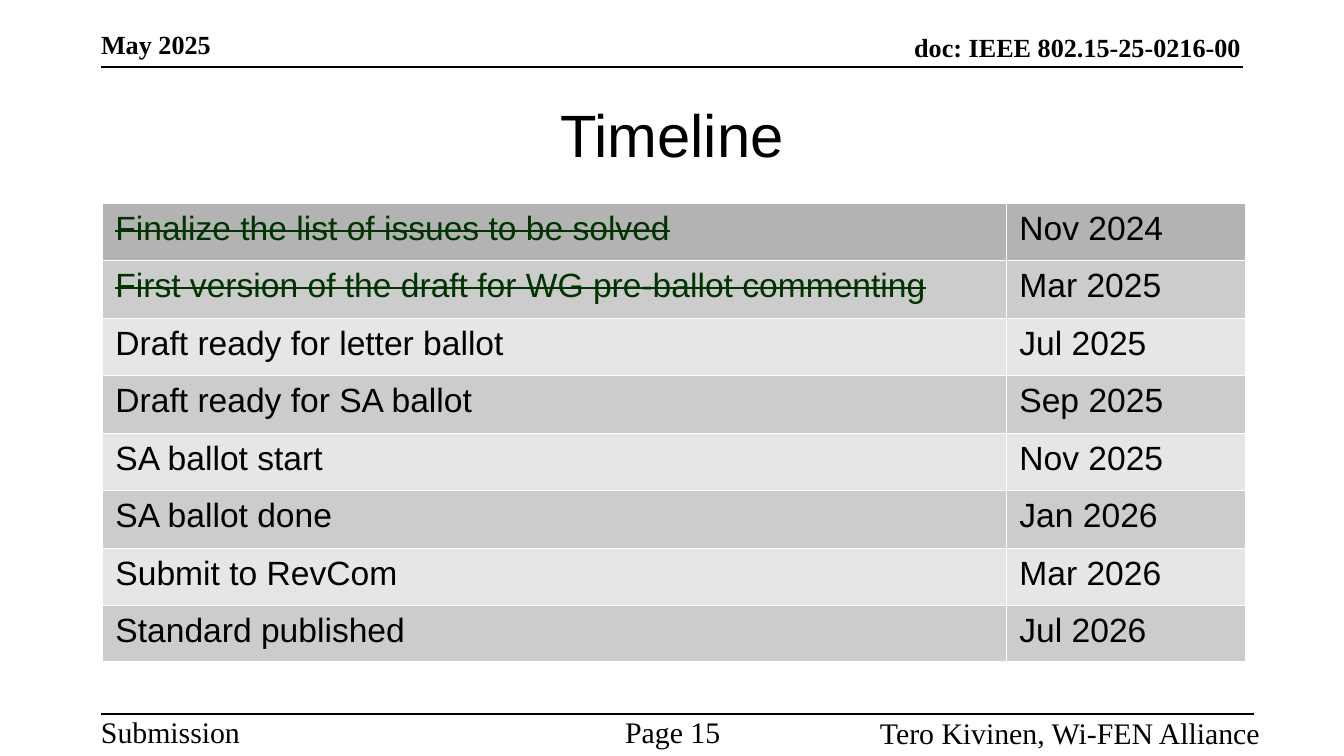
from lxml import etree
from pptx import Presentation
from pptx import util as u
from pptx.dml.color import RGBColor
from pptx.enum import shapes, text
from pptx.oxml import ns

PX = 914400 / 134.4  # EMU in one px
COLORS = {
    "black": "000000",
    "white": "FFFFFF",
    "done": "003300",
    "first_row": "B3B3B3",
    "dark_row": "CCCCCC",
    "light_row": "E6E6E6",
}


def px(length):
    return u.Emu(round(length * PX))


def add_run(paragraph, words, size, font, color="black", bold=False):
    run = paragraph.add_run()
    run.text = words
    run.font.size = u.Pt(size)
    run.font.name = font
    run.font.bold = bold
    run.font.color.rgb = RGBColor.from_string(COLORS[color])
    return run


presentation = Presentation()
presentation.slide_width, presentation.slide_height = px(1344), px(756)
slide = presentation.slides.add_slide(presentation.slide_layouts[6])

# Header and footer rules
for left, right, y in [(101, 1243, 67), (101, 1254, 714)]:
    rule = slide.shapes.add_connector(
        shapes.MSO_CONNECTOR.STRAIGHT, px(left), px(y), px(right), px(y))
    rule.line.width = u.Pt(1)
    rule.line.color.rgb = RGBColor.from_string(COLORS["black"])
    etree.SubElement(rule._element.spPr, ns.qn("a:effectLst"))

# Header, footer and title texts
LEFT, CENTER, RIGHT = text.PP_ALIGN.LEFT, text.PP_ALIGN.CENTER, text.PP_ALIGN.RIGHT
TOP, MIDDLE, BOTTOM = text.MSO_ANCHOR.TOP, text.MSO_ANCHOR.MIDDLE, text.MSO_ANCHOR.BOTTOM
SERIF, SANS = "Times New Roman", "Arial"
labels = [
    ("May 2025", (101, 40, 375, 20), LEFT, BOTTOM, 14, SERIF, True),
    ("doc: IEEE 802.15-25-0216-00", (456, 43, 785, 20), RIGHT, BOTTOM, 14, SERIF, True),
    ("Submission", (101, 714, 251, 31), LEFT, TOP, 16, SERIF, False),
    ("Page 15 ", (551, 714, 251, 31), CENTER, TOP, 16, SERIF, False),
    ("Tero Kivinen, Wi-FEN Alliance", (767, 715, 493, 31), RIGHT, TOP, 16, SERIF, False),
    ("Timeline", (67, 65, 1210, 138), CENTER, MIDDLE, 32, SANS, False),
]
for words, box, align, anchor, size, font, bold in labels:
    frame = slide.shapes.add_textbox(*map(px, box)).text_frame
    frame.word_wrap = True
    frame.vertical_anchor = anchor
    frame.margin_left = frame.margin_right = frame.margin_top = frame.margin_bottom = 0
    paragraph = frame.paragraphs[0]
    paragraph.alignment = align
    add_run(paragraph, words, size, font, bold=bold)

# Timeline table
milestones = [
    ("Finalize the list of issues to be solved", "Nov 2024"),
    ("First version of the draft for WG pre-ballot commenting", "Mar 2025"),
    ("Draft ready for letter ballot", "Jul 2025"),
    ("Draft ready for SA ballot", "Sep 2025"),
    ("SA ballot start", "Nov 2025"),
    ("SA ballot done", "Jan 2026"),
    ("Submit to RevCom", "Mar 2026"),
    ("Standard published", "Jul 2026"),
]
DONE_COUNT = 2
column_widths = [904, 239]
row_heights = [57, 58] * 3 + [57, 56]
table = slide.shapes.add_table(
    len(milestones), 2, px(102), px(203),
    px(sum(column_widths)), px(sum(row_heights))).table
table.first_row = table.horz_banding = False
for column, width in zip(table.columns, column_widths):
    column.width = px(width)

for row, milestone in enumerate(milestones):
    table.rows[row].height = px(row_heights[row])
    shade = "first_row" if row == 0 else "dark_row" if row % 2 else "light_row"
    for column, words in enumerate(milestone):
        cell = table.cell(row, column)
        done = column == 0 and row < DONE_COUNT
        run = add_run(cell.text_frame.paragraphs[0], words, 18, SANS,
                      "done" if done else "black")
        if done:
            run.font._element.set("strike", "sngStrike")
        # Hairline borders come before the fill in the cell properties
        properties = cell._tc.get_or_add_tcPr()
        for side in ("lnL", "lnR", "lnT", "lnB"):
            border = etree.SubElement(properties, ns.qn(f"a:{side}"), w="720")
            fill = etree.SubElement(border, ns.qn("a:solidFill"))
            etree.SubElement(fill, ns.qn("a:srgbClr"), val=COLORS["white"])
        cell.fill.solid()
        cell.fill.fore_color.rgb = RGBColor.from_string(COLORS[shade])

presentation.save("out.pptx")
